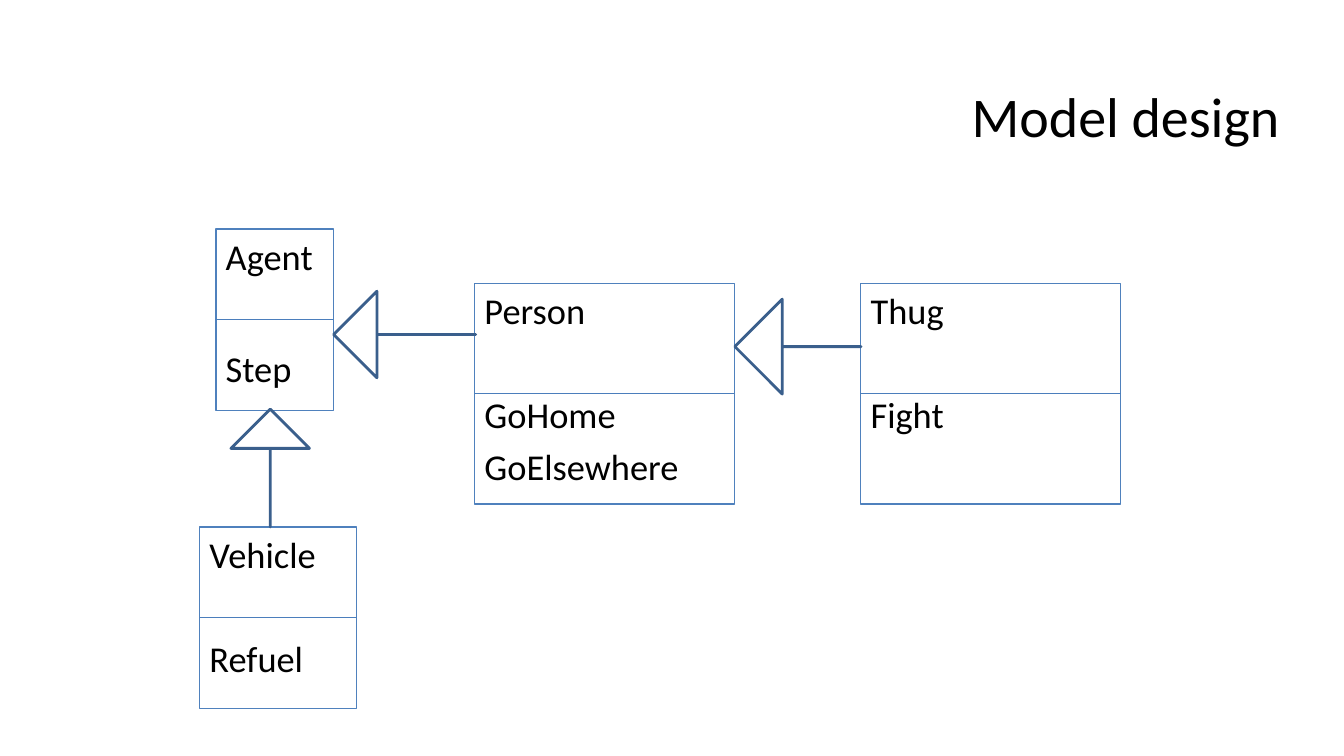
from dataclasses import dataclass

from lxml import etree
from pptx import Presentation
from pptx.dml.color import RGBColor
from pptx.enum.shapes import MSO_CONNECTOR, MSO_SHAPE
from pptx.enum.text import MSO_ANCHOR, PP_ALIGN
from pptx.oxml.ns import qn
from pptx.util import Cm, Pt

RECT, LEFT_HEAD, UP_HEAD = MSO_SHAPE.RECTANGLE, MSO_SHAPE.LEFT_ARROW, MSO_SHAPE.UP_ARROW
STRAIGHT = MSO_CONNECTOR.STRAIGHT
TOP, MIDDLE = MSO_ANCHOR.TOP, MSO_ANCHOR.MIDDLE
LEFT, RIGHT = PP_ALIGN.LEFT, PP_ALIGN.RIGHT
LEFT_SIDE, RIGHT_SIDE = 1, 3


@dataclass(frozen=True)
class Theme:
    """Hold the font, colours, type sizes and line widths."""
    font: str = "Calibri"
    ink: str = "000000"
    edge: str = "4F81BD"
    rule: str = "4B7EBC"
    arrow: str = "3A5F8C"
    title: float = 40
    body: float = 26
    thin: float = 0.75
    medium: float = 1
    thick: float = 2


class Board:
    """Draw class diagram parts on one slide in one theme."""

    def __init__(self, slide, theme):
        """Keep the slide and its theme."""
        self.shapes = slide.shapes
        self.theme = theme

    def apply(self, target, values):
        """Set each named value on the target."""
        for name, value in values.items():
            setattr(target, name, value)

    def stroke(self, line, color, width):
        """Colour a line and set its width."""
        line.color.rgb = RGBColor.from_string(color)
        line.width = Pt(width)

    def letter(self, frame, lines, size, align, anchor):
        """Fill a frame with pairs of text and space before."""
        self.apply(frame, {"word_wrap": True, "vertical_anchor": anchor})
        for index, (text, space) in enumerate(lines):
            para = frame.add_paragraph() if index else frame.paragraphs[0]
            self.apply(para, {"text": text, "alignment": align, "space_before": Pt(space)})
            font = para.runs[0].font
            self.apply(font, {"name": self.theme.font, "size": Pt(size)})
            font.color.rgb = RGBColor.from_string(self.theme.ink)

    def title(self, text, place):
        """Add the right-aligned heading."""
        box = self.shapes.add_textbox(*map(Cm, place))
        self.letter(box.text_frame, [(text, 0)], self.theme.title, RIGHT, MIDDLE)

    def outline(self, kind, place, color, width):
        """Add an unfilled shape."""
        shape = self.shapes.add_shape(kind, *map(Cm, place))
        shape.shadow.inherit = False
        shape.fill.background()
        self.stroke(shape.line, color, width)
        return shape

    def entity(self, place, lines):
        """Add a class box split by a line at half its height."""
        box = self.outline(RECT, place, self.theme.edge, self.theme.medium)
        self.letter(box.text_frame, lines, self.theme.body, LEFT, TOP)
        rule = self.shapes.add_connector(STRAIGHT, 0, 0, 0, 0)
        rule.begin_connect(box, LEFT_SIDE)
        rule.end_connect(box, RIGHT_SIDE)
        self.stroke(rule.line, self.theme.rule, self.theme.thin)
        etree.SubElement(rule.element.spPr, qn("a:effectLst"))

    def arrow(self, kind, place):
        """Add an open inheritance arrow with a bare shaft."""
        arrow = self.outline(kind, place, self.theme.arrow, self.theme.thick)
        arrow.adjustments[0] = 0
        arrow.adjustments[1] = 0.5


def main():
    """Build the model design slide."""
    deck = Presentation()
    deck.slide_width, deck.slide_height = Cm(33.87), Cm(19.05)
    board = Board(deck.slides.add_slide(deck.slide_layouts[6]), Theme())
    board.title("Model design", (10.9, 1.3, 21.59, 3.18))

    first, gap, wide = 5.8, 43.3, 49
    entities = [
        ((5.44, 5.77, 2.97, 4.57), [("Agent", first), ("Step", wide)]),
        ((11.96, 7.14, 6.55, 5.56),
         [("Person", first), ("GoHome", gap), ("GoElsewhere", first)]),
        ((21.69, 7.14, 6.55, 5.56), [("Thug", first), ("Fight", gap)]),
        ((5.03, 13.28, 3.96, 4.57), [("Vehicle", first), ("Refuel", gap)]),
    ]
    for place, lines in entities:
        board.entity(place, lines)

    arrows = [
        (UP_HEAD, (5.82, 10.31, 1.98, 2.97)),
        (LEFT_HEAD, (8.41, 7.34, 3.58, 2.18)),
        (LEFT_HEAD, (18.52, 7.54, 3.18, 2.39)),
    ]
    for kind, place in arrows:
        board.arrow(kind, place)
    deck.save("out.pptx")


if __name__ == "__main__":
    main()
